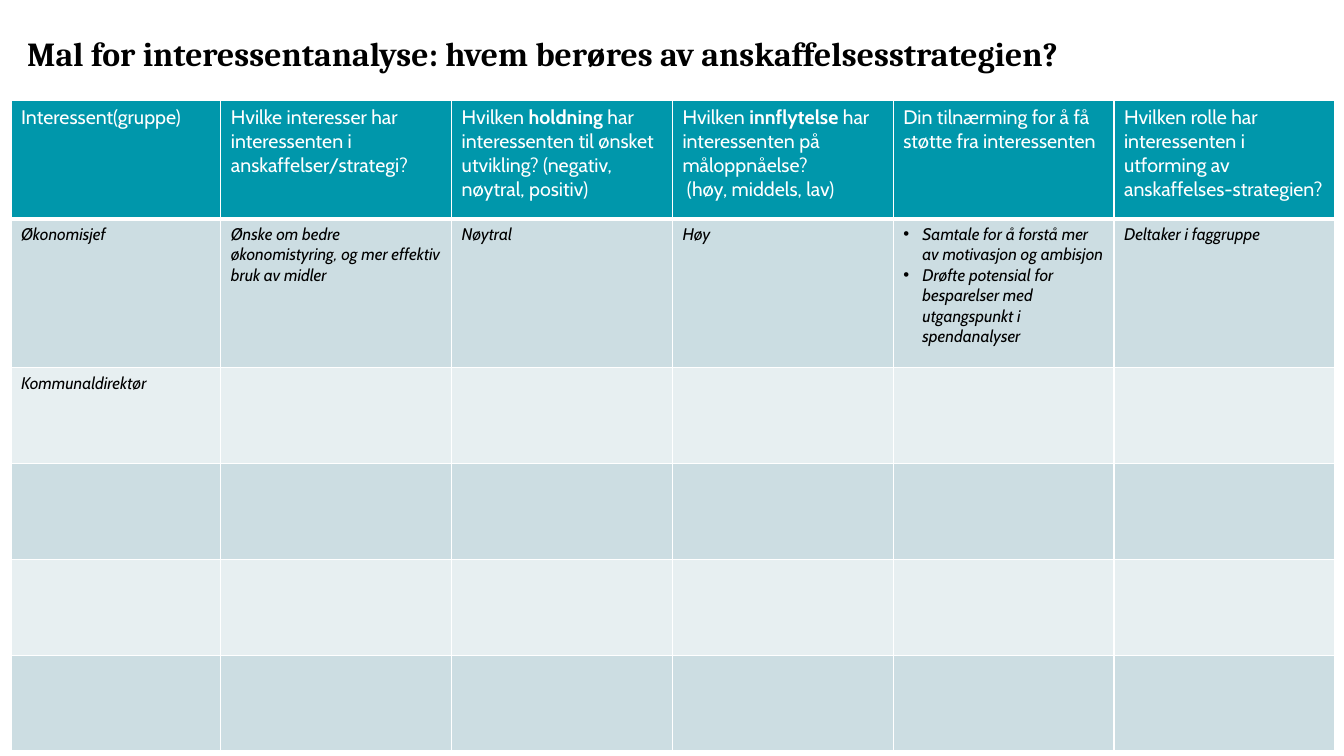
import pptx
import pptx.dml.color
import pptx.enum.text
import pptx.oxml
import pptx.oxml.ns
import pptx.util
from dataclasses import dataclass

PX = 9144


@dataclass(frozen=True)
class Theme:
    """Colours, fonts and type sizes of the slide."""
    title_font: str = "Cambria"
    body_font: str = "Cabin"
    title_size: int = 24
    header_size: int = 14
    body_size: int = 12
    ink: str = "000000"
    white: str = "FFFFFF"
    header: str = "0097AB"
    dark_band: str = "CCDDE2"
    light_band: str = "E7EFF1"
    influence: str = "CBDDE2"


THEME = Theme()
TITLE = "Mal for interessentanalyse: hvem berøres av anskaffelsesstrategien?"
COLUMNS = [208, 229] + [219] * 4
ROWS = [117, 148] + [95] * 4
HEADERS = [
    "Interessent(gruppe)",
    "Hvilke interesser har interessenten i anskaffelser/strategi?",
    "Hvilken **holdning** har interessenten til ønsket utvikling? (negativ, nøytral, positiv)",
    "Hvilken **innflytelse** har interessenten på måloppnåelse?\n (høy, middels, lav)",
    "Din tilnærming for å få støtte fra interessenten",
    "Hvilken rolle har interessenten i utforming av anskaffelses-strategien?",
]
STAKEHOLDERS = [
    [
        "Økonomisjef",
        "Ønske om bedre økonomistyring, og mer effektiv bruk av midler",
        "Nøytral",
        "Høy",
        "Samtale for å forstå mer av motivasjon og ambisjon\n"
        "Drøfte potensial for besparelser med utgangspunkt i spendanalyser",
        "Deltaker i faggruppe",
    ],
    ["Kommunaldirektør"],
]
BULLET_CELL = (1, 4)
INFLUENCE_CELL = (1, 3)


def px(length):
    """Turn whole pixels into EMU."""
    return pptx.util.Emu(length * PX)


def rgb(colour):
    """Turn a hex string into a colour."""
    return pptx.dml.color.RGBColor.from_string(colour)


def add_bullet(para):
    """Give a paragraph a hanging round bullet."""
    properties = para._p.get_or_add_pPr()
    properties.set("marL", str(px(19)))
    properties.set("indent", str(px(-19)))
    namespace = pptx.oxml.ns.nsdecls("a")
    for tag in ('buFont {} typeface="Arial"', 'buChar {} char="•"'):
        properties.append(pptx.oxml.parse_xml(f"<a:{tag.format(namespace)}/>"))


def write(frame, text, *, font, size, colour, bold=False, italic=False,
          bullets=False, spacing=None):
    """Write lines as paragraphs, with **marked** words in bold."""
    for index, line in enumerate(text.split("\n")):
        para = frame.add_paragraph() if index else frame.paragraphs[0]
        para.alignment = pptx.enum.text.PP_ALIGN.LEFT
        if spacing:
            para.line_spacing = spacing
        if bullets:
            add_bullet(para)
        for part, words in enumerate(line.split("**")):
            span = para.add_run()
            span.text = words
            span.font.name = font
            span.font.size = pptx.util.Pt(size)
            span.font.color.rgb = rgb(colour)
            span.font.bold = bold or part % 2 == 1
            span.font.italic = italic


def set_borders(cell, **widths):
    """Draw white borders of the given point widths, keyed by side."""
    properties = cell._tc.get_or_add_tcPr()
    for side, width in widths.items():
        properties.append(pptx.oxml.parse_xml(
            f'<a:ln{side} {pptx.oxml.ns.nsdecls("a")} w="{pptx.util.Pt(width)}">'
            f'<a:solidFill><a:srgbClr val="{THEME.white}"/></a:solidFill></a:ln{side}>'))


def place_title(page, left, top, width, height):
    """Place the heading in the title placeholder."""
    box = page.shapes.title
    box.left, box.top, box.width, box.height = map(px, (left, top, width, height))
    frame = box.text_frame
    frame.margin_left = frame.margin_right = frame.margin_top = frame.margin_bottom = 0
    frame.vertical_anchor = pptx.enum.text.MSO_ANCHOR.TOP
    frame.auto_size = pptx.enum.text.MSO_AUTO_SIZE.NONE
    frame.word_wrap = True
    write(frame, TITLE, font=THEME.title_font, size=THEME.title_size,
          colour=THEME.ink, bold=True, spacing=0.9)


def cell_fill(row, column):
    """Choose the fill of a cell from its place in the grid."""
    if row == 0:
        return THEME.header
    if (row, column) == INFLUENCE_CELL:
        return THEME.influence
    return THEME.dark_band if row % 2 else THEME.light_band


def place_table(page, left, top):
    """Place the stakeholder table with its top left corner at the given point."""
    table = page.shapes.add_table(len(ROWS), len(COLUMNS), px(left), px(top),
                                  px(sum(COLUMNS)), px(sum(ROWS))).table
    for column, width in zip(table.columns, COLUMNS):
        column.width = px(width)
    for row, height in zip(table.rows, ROWS):
        row.height = px(height)
    texts = [HEADERS] + STAKEHOLDERS
    for row in range(len(ROWS)):
        for column in range(len(COLUMNS)):
            cell = table.cell(row, column)
            set_borders(cell, L=1, R=1, T=3 if row == 1 else 1, B=3 if row == 0 else 1)
            cell.fill.solid()
            cell.fill.fore_color.rgb = rgb(cell_fill(row, column))
            if row < len(texts) and column < len(texts[row]):
                write(cell.text_frame, texts[row][column], font=THEME.body_font,
                      size=THEME.body_size if row else THEME.header_size,
                      colour=THEME.ink if row else THEME.white,
                      italic=row > 0, bullets=(row, column) == BULLET_CELL)


def main():
    """Build the slide and save the deck."""
    deck = pptx.Presentation()
    deck.slide_width, deck.slide_height = px(1333), px(750)
    page = deck.slides.add_slide(deck.slide_layouts[5])
    place_title(page, 27, 37, 1295, 77)
    place_table(page, 11, 100)
    deck.save("out.pptx")


if __name__ == "__main__":
    main()
